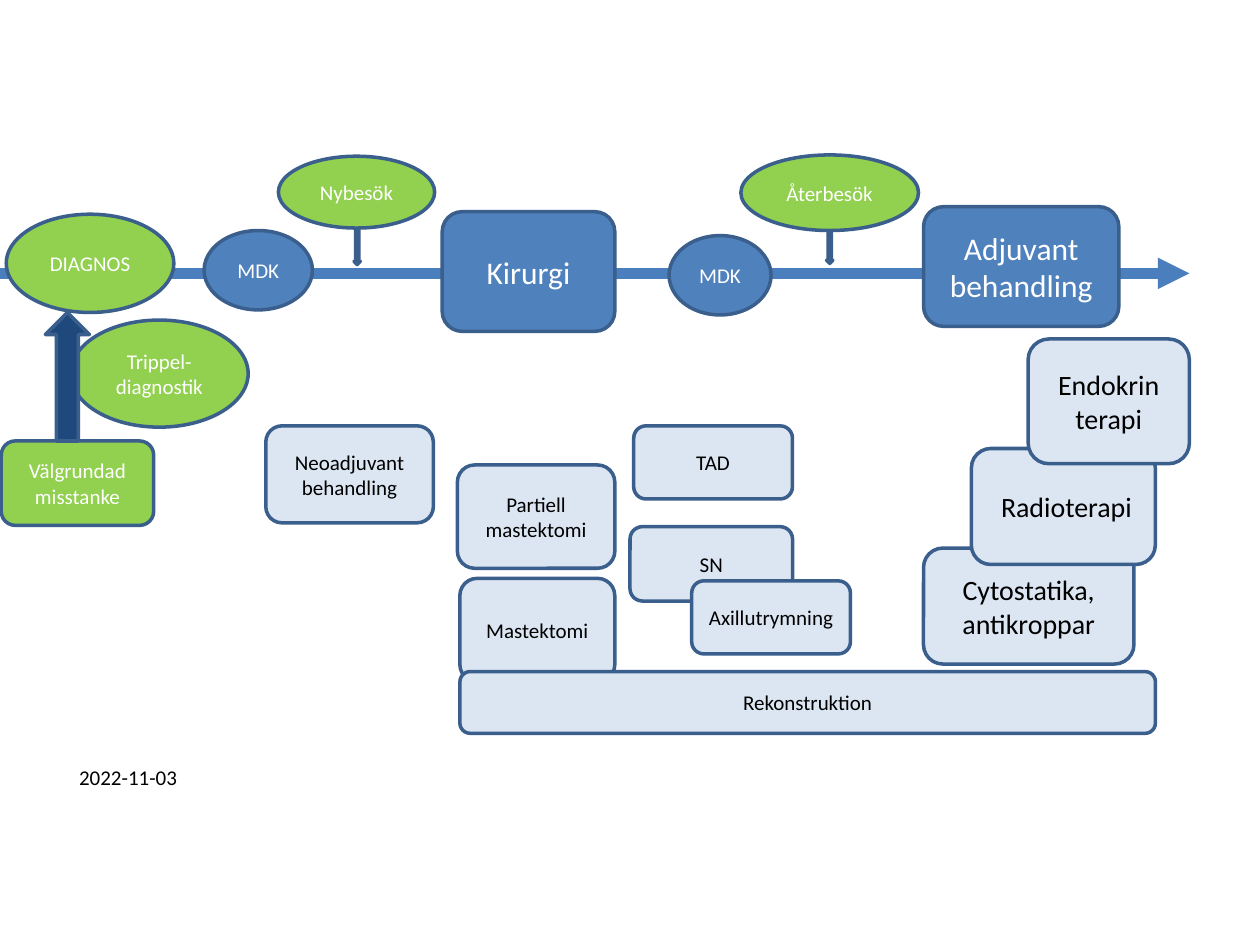
from dataclasses import dataclass

from lxml.etree import SubElement
from pptx import Presentation
from pptx.dml.color import RGBColor
from pptx.enum.shapes import MSO_CONNECTOR, MSO_SHAPE as Preset
from pptx.enum.text import MSO_ANCHOR, PP_ALIGN
from pptx.oxml.ns import qn
from pptx.util import Inches, Pt


@dataclass(frozen=True)
class Theme:
    font: str = "Calibri"
    small: int = 12
    medium: int = 16
    large: int = 18
    black: str = "000000"
    white: str = "FFFFFF"
    pale: str = "DCE6F2"
    blue: str = "4F81BD"
    navy: str = "1F497D"
    green: str = "92D050"
    outline: str = "3A5F8C"
    timeline: str = "4B7EBC"
    outline_width: int = 2
    timeline_width: int = 6


THEME = Theme()


@dataclass(frozen=True)
class Node:
    text: str
    left: float
    top: float
    width: float
    height: float
    preset: Preset = Preset.ROUNDED_RECTANGLE
    fill: str = THEME.pale
    size: int = THEME.small


def treatment(text: str, left: float, top: float, width: float, height: float,
              size: int = THEME.small) -> Node:
    return Node(text, left, top, width, height, size=size)


def contact(text: str, left: float, top: float, width: float, height: float) -> Node:
    return Node(text, left, top, width, height, Preset.OVAL, THEME.green)


def conference(left: float, top: float, width: float) -> Node:
    return Node("MDK", left, top, width, 0.63, Preset.OVAL, THEME.blue)


def stage(text: str, left: float, top: float, width: float) -> Node:
    return Node(text, left, top, width, 0.95, fill=THEME.blue, size=THEME.large)


def visit_arrow(left: float, top: float, height: float) -> Node:
    return Node("", left, top, 0.05, height, Preset.DOWN_ARROW, THEME.blue)


# Treatments lying behind the timeline, back to front
TREATMENTS = [
    treatment("Cytostatika, antikroppar", 7.33, 4.35, 1.67, 0.92, THEME.medium),
    treatment(" Radioterapi", 7.71, 3.56, 1.46, 0.92, THEME.medium),
    treatment("Endokrin terapi", 8.16, 2.69, 1.28, 0.99, THEME.medium),
    treatment("Neoadjuvant behandling", 2.11, 3.38, 1.33, 0.77),
    treatment("Partiell mastektomi", 3.63, 3.69, 1.25, 0.82),
    treatment("Mastektomi", 3.65, 4.59, 1.23, 0.82),
    treatment("SN", 5, 4.18, 1.29, 0.59),
    treatment("Axillutrymning", 5.49, 4.61, 1.26, 0.58),
]

# Steps along the timeline and the boxes in front
STEPS = [
    contact("Trippel-\ndiagnostik", 0.56, 2.54, 1.41, 0.85),
    stage("Kirurgi", 3.51, 1.68, 1.37),
    conference(1.62, 1.83, 0.86),
    conference(5.31, 1.87, 0.81),
    visit_arrow(2.81, 1.67, 0.43),
    contact("Nybesök", 2.21, 1.24, 1.24, 0.57),
    visit_arrow(6.56, 1.64, 0.45),
    contact("Återbesök", 5.88, 1.23, 1.41, 0.6),
    contact("DIAGNOS", 0.05, 1.7, 1.33, 0.78),
    Node("Välgrundad misstanke", 0.01, 3.5, 1.21, 0.67,
         Preset.FLOWCHART_ALTERNATE_PROCESS, THEME.green),
    Node("", 0.36, 2.48, 0.35, 1.02, Preset.UP_ARROW, THEME.navy),
    treatment("Rekonstruktion", 3.65, 5.33, 5.52, 0.49),
    stage("Adjuvant behandling", 7.33, 1.64, 1.55),
    treatment("TAD", 5.03, 3.38, 1.26, 0.58),
]


def write_text(shape, text: str, size: int, color: str, alignment: PP_ALIGN) -> None:
    frame = shape.text_frame
    frame.word_wrap = True
    frame.vertical_anchor = MSO_ANCHOR.MIDDLE
    for index, line in enumerate(text.split("\n")):
        paragraph = frame.add_paragraph() if index else frame.paragraphs[0]
        paragraph.alignment = alignment
        run = paragraph.add_run()
        run.text = line
        run.font.name = THEME.font
        run.font.size = Pt(size)
        run.font.color.rgb = RGBColor.from_string(color)


def draw_node(slide, node: Node) -> None:
    shape = slide.shapes.add_shape(node.preset, Inches(node.left), Inches(node.top),
                                   Inches(node.width), Inches(node.height))
    shape.shadow.inherit = False
    shape.fill.solid()
    shape.fill.fore_color.rgb = RGBColor.from_string(node.fill)
    shape.line.color.rgb = RGBColor.from_string(THEME.outline)
    shape.line.width = Pt(THEME.outline_width)
    if node.text:
        shape.text_frame.margin_left = shape.text_frame.margin_right = Inches(0.05)
        color = THEME.black if node.fill == THEME.pale else THEME.white
        write_text(shape, node.text, node.size, color, PP_ALIGN.CENTER)


def draw_timeline(slide, left: float, right: float, height: float) -> None:
    connector = slide.shapes.add_connector(MSO_CONNECTOR.STRAIGHT, Inches(left), Inches(height),
                                           Inches(right), Inches(height))
    connector.line.color.rgb = RGBColor.from_string(THEME.timeline)
    connector.line.width = Pt(THEME.timeline_width)
    SubElement(connector.line._get_or_add_ln(), qn("a:tailEnd"), type="triangle")
    SubElement(connector._element.spPr, qn("a:effectLst"))


def draw_date(slide, text: str) -> None:
    box = slide.shapes.add_textbox(Inches(0.53), Inches(6.02), Inches(1.34), Inches(0.3))
    write_text(box, text, THEME.small, THEME.black, PP_ALIGN.LEFT)


def main() -> None:
    presentation = Presentation()
    presentation.slide_width = Inches(10)
    presentation.slide_height = Inches(7.5)
    slide = presentation.slides.add_slide(presentation.slide_layouts[6])

    draw_date(slide, "2022-11-03")
    for node in TREATMENTS:
        draw_node(slide, node)
    draw_timeline(slide, 0, 9.44, 2.17)
    for node in STEPS:
        draw_node(slide, node)

    presentation.save("out.pptx")


if __name__ == "__main__":
    main()
